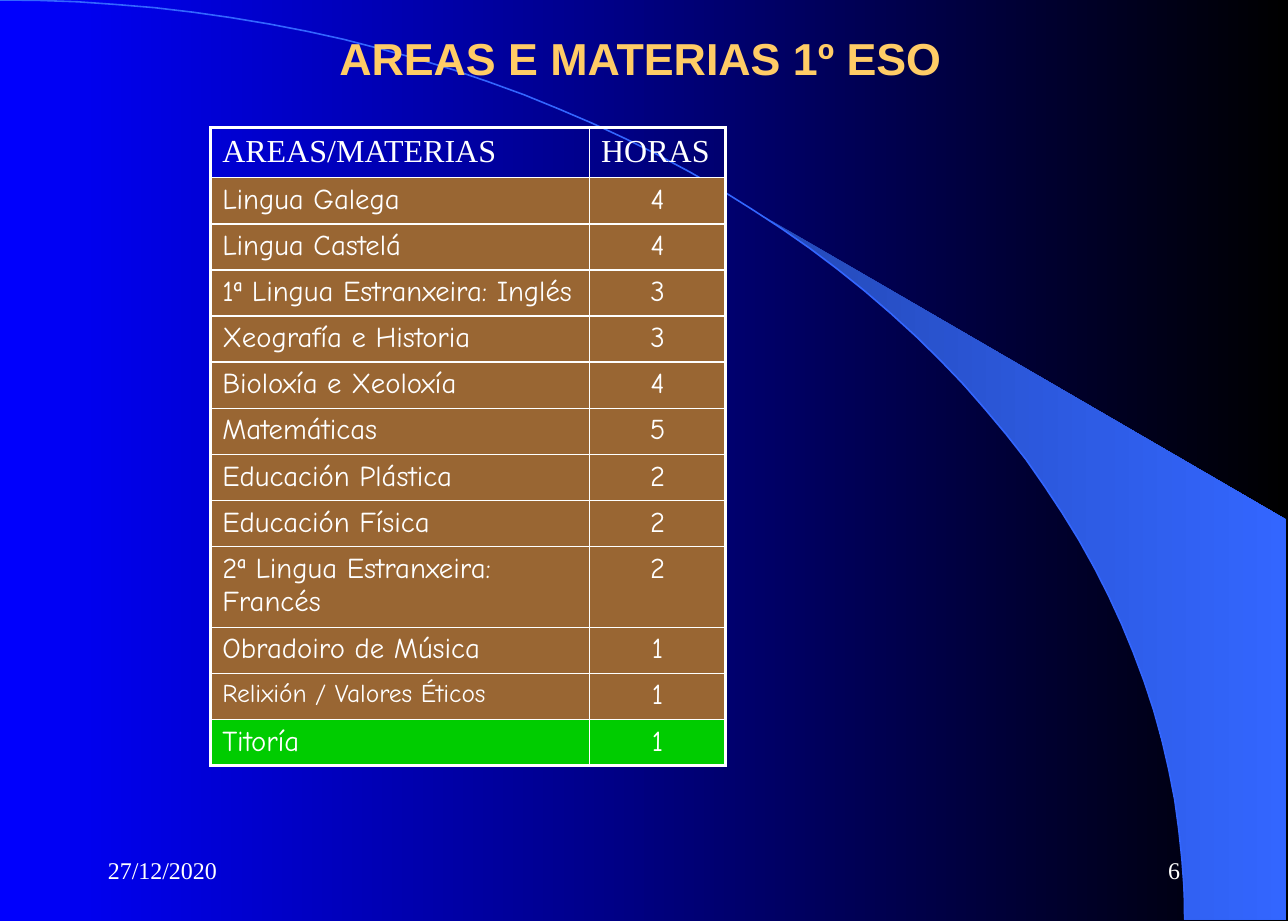
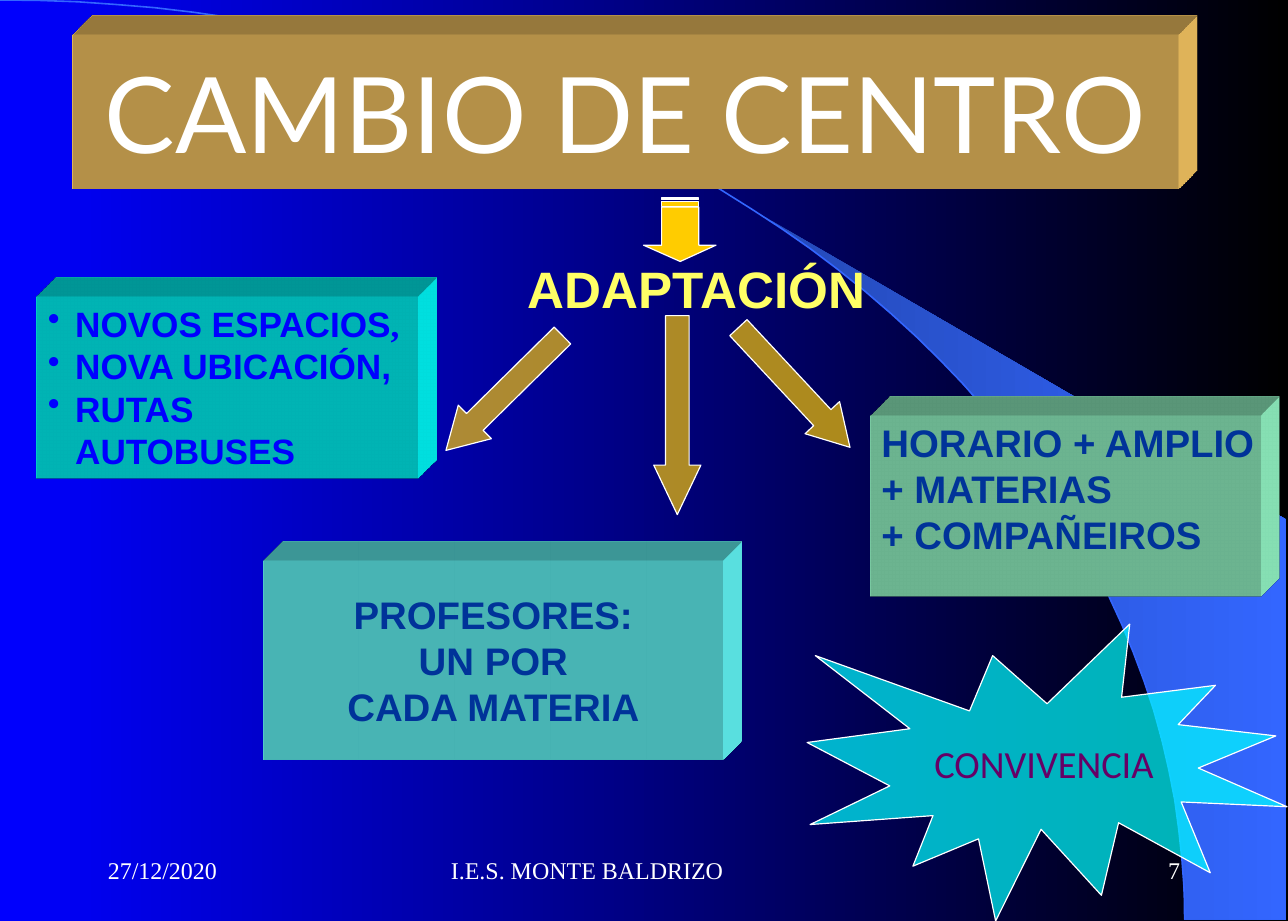
from math import acos, cos, pi, sin

from lxml.etree import SubElement
from pptx import Presentation
from pptx.dml.color import RGBColor
from pptx.enum.shapes import MSO_SHAPE
from pptx.enum.text import MSO_ANCHOR, PP_ALIGN
from pptx.oxml import parse_xml
from pptx.oxml.ns import nsdecls, qn
from pptx.util import Cm, Pt

WHITE = RGBColor(0xFF, 0xFF, 0xFF)
BLACK = RGBColor(0x00, 0x00, 0x00)
BLUE = RGBColor(0x00, 0x00, 0xFF)
SWOOSH_DARK = RGBColor(0x24, 0x49, 0xB6)
SWOOSH_LIGHT = RGBColor(0x33, 0x66, 0xFF)
SAND = RGBColor(0xFF, 0xCC, 0x66)
GOLD = RGBColor(0xFF, 0xCC, 0x00)
YELLOW = RGBColor(0xFF, 0xFF, 0x66)
CYAN = RGBColor(0x00, 0xFF, 0xFF)
AQUA = RGBColor(0x66, 0xFF, 0xFF)
MINT = RGBColor(0x99, 0xFF, 0xCC)
NAVY = RGBColor(0x00, 0x33, 0x99)
PURPLE = RGBColor(0x66, 0x00, 0x66)
BROWN = RGBColor(0x99, 0x66, 0x33)
GREEN = RGBColor(0x00, 0xCC, 0x00)

FOOTER = {"name": "Times New Roman", "size": Pt(15)}
TITLE = {"name": "Arial", "size": Pt(28), "bold": True}
BANNER = {"name": "Lato", "size": Pt(66)}
KEYWORD = {"name": "Arial", "size": Pt(32), "bold": True}
LIST = {"name": "Arial", "size": Pt(22), "bold": True}
BOX = {"name": "Arial", "size": Pt(24), "bold": True}
SEAL = {"name": "Calibri", "size": Pt(24)}
HEADER = {"name": "Times New Roman", "size": Pt(20)}
CELL = {"name": "Comic Neue", "size": Pt(18)}
CELL_SMALL = {"name": "Comic Neue", "size": Pt(16)}

ARC_W, ARC_H = 26.14, 20.29
SWOOSH_START = acos(1 - 4.7 / ARC_H)

SUBJECTS = [
    ("Lingua Galega", 4), ("Lingua Castelá", 4), ("1ª Lingua Estranxeira: Inglés", 3),
    ("Xeografía e Historia", 3), ("Bioloxía e Xeoloxía", 4), ("Matemáticas", 5),
    ("Educación Plástica", 2), ("Educación Física", 2), ("2ª Lingua Estranxeira: Francés", 2),
    ("Obradoiro de Música", 1), ("Relixión / Valores Éticos", 1), ("Titoría", 1),
]


def arc(start, steps=48):
    """Return points in cm along the quarter ellipse, from an angle to its end."""
    angles = [start + (pi / 2 - start) * i / steps for i in range(steps + 1)]
    return [(ARC_W * sin(a), ARC_H * (1 - cos(a))) for a in angles]


class Deck:
    """Hold the presentation, its shared style and the current slide."""

    def __init__(self):
        """Start an empty presentation of the right size."""
        self.prs = Presentation()
        self.prs.slide_width, self.prs.slide_height = Cm(28.42), Cm(20.32)
        self.s = None

    def slide(self, number, center=None):
        """Add a slide with its background, swoosh and footers."""
        self.s = self.prs.slides.add_slide(self.prs.slide_layouts[6])
        self.gradient(self.s.background.fill, BLUE, BLACK)
        corners = [(28.37, 11.46), (28.37, ARC_H)]
        swoosh = self.outline([corners + arc(SWOOSH_START)[::-1]])
        self.gradient(swoosh.fill, SWOOSH_DARK, SWOOSH_LIGHT)
        swoosh.line.fill.background()
        curve = self.outline([arc(0)], close=False)
        curve.fill.background()
        self.stroke(curve, SWOOSH_LIGHT, 1)
        footers = [(2.13, 5.92, "27/12/2020", PP_ALIGN.LEFT),
                   (9.7, 8.99, center, PP_ALIGN.LEFT),
                   (20.37, 5.92, str(number), PP_ALIGN.RIGHT)]
        for x, w, text, align in footers:
            if text:
                self.label((x, 18.52, w, 1.35), [text], FOOTER, WHITE, align, MSO_ANCHOR.MIDDLE)

    def gradient(self, fill, first, last):
        """Give a fill a left to right gradient."""
        fill.gradient()
        fill.gradient_angle = 0
        for stop, color, position in zip(fill.gradient_stops, (first, last), (0, 1)):
            stop.color.rgb, stop.position = color, position

    def stroke(self, sp, color, width):
        """Give a shape a solid outline."""
        sp.line.color.rgb, sp.line.width = color, Pt(width)

    def outline(self, contours, close=True):
        """Add a freeform from lists of points in cm."""
        contours = [[(round(x * 100), round(y * 100)) for x, y in c] for c in contours]
        builder = self.s.shapes.build_freeform(*contours[0][0], scale=Cm(0.01))
        for i, (start, *rest) in enumerate(contours):
            if i:
                builder.move_to(*start)
            builder.add_line_segments(rest, close=close)
        sp = builder.convert_to_shape()
        sp.shadow.inherit = False
        return sp

    def style(self, r, font, color):
        """Set the font values and colour of a run."""
        for key, value in font.items():
            setattr(r.font, key, value)
        r.font.color.rgb = color

    def put_text(self, sp, lines, font, color, align, anchor, **insets):
        """Put one paragraph per line into a shape."""
        tf = sp.text_frame
        values = {"word_wrap": True, "vertical_anchor": anchor, **insets}
        for key, value in values.items():
            setattr(tf, key, value)
        for i, line in enumerate(lines):
            p = tf.add_paragraph() if i else tf.paragraphs[0]
            p.alignment = align
            r = p.add_run()
            r.text = line
            self.style(r, font, color)
        return tf

    def label(self, at, lines, font, color, align=PP_ALIGN.LEFT, anchor=MSO_ANCHOR.TOP, **insets):
        """Add a text box."""
        sp = self.s.shapes.add_textbox(*map(Cm, at))
        self.put_text(sp, lines, font, color, align, anchor, **insets)

    def shape(self, kind, at, fill, alpha=None):
        """Add a preset shape with a fill, which may be translucent."""
        sp = self.s.shapes.add_shape(kind, *map(Cm, at))
        sp.shadow.inherit = False
        sp.fill.solid()
        sp.fill.fore_color.rgb = fill
        sp.line.fill.background()
        if alpha:
            color = sp._element.spPr.find(qn("a:solidFill"))[0]
            SubElement(color, qn("a:alpha")).set("val", str(alpha * 1000))
            self.stroke(sp, WHITE, 0.75)
        return sp

    def block(self, at, fill, lines, font, color, align=PP_ALIGN.CENTER,
              anchor=MSO_ANCHOR.MIDDLE, **insets):
        """Add a box extruded to the top right, and return its text frame."""
        sp = self.shape(MSO_SHAPE.RECTANGLE, at, fill)
        for xml in (
            f'<a:scene3d {nsdecls("a")}><a:camera prst="legacyObliqueTopRight"/>'
            '<a:lightRig rig="legacyFlat3" dir="b"/></a:scene3d>',
            f'<a:sp3d {nsdecls("a")} extrusionH="430200" prstMaterial="legacyMatte">'
            '<a:bevelT w="13500" h="13500" prst="angle"/>'
            '<a:bevelB w="13500" h="13500" prst="angle"/>'
            f'<a:extrusionClr><a:srgbClr val="{fill}"/></a:extrusionClr></a:sp3d>',
        ):
            sp._element.spPr.append(parse_xml(xml))
        return self.put_text(sp, lines, font, color, align, anchor, **insets)

    def bullets(self, tf):
        """Give every paragraph a hanging bullet."""
        for p in tf.paragraphs:
            pPr = p._p.get_or_add_pPr()
            pPr.set("marL", str(Cm(0.6)))
            pPr.set("indent", str(-Cm(0.6)))
            SubElement(pPr, qn("a:buChar")).set("char", "•")

    def arrow(self, at, rotation, head):
        """Add a translucent block arrow."""
        sp = self.shape(MSO_SHAPE.RIGHT_ARROW, at, GOLD, 68)
        sp.rotation = rotation
        sp.adjustments[0], sp.adjustments[1] = 0.5, head

    def borders(self, cell, outer):
        """Draw white cell borders, thicker on the outer sides."""
        tcPr = cell._tc.get_or_add_tcPr()
        for side in "LRTB":
            width = Pt(2.25 if side in outer else 1)
            tcPr.append(parse_xml(
                f'<a:ln{side} {nsdecls("a")} w="{width}"><a:solidFill>'
                f'<a:srgbClr val="{WHITE}"/></a:solidFill></a:ln{side}>'))

    def table(self, at, widths, rows, heights):
        """Add the table of subjects and hours."""
        size = sum(widths), sum(heights)
        tbl = self.s.shapes.add_table(len(rows), len(widths), *map(Cm, at + size)).table
        tbl.first_row = tbl.horz_banding = False
        for column, w in zip(tbl.columns, widths):
            column.width = Cm(w)
        last = len(rows) - 1
        for i, (row, h) in enumerate(zip(rows, heights)):
            tbl.rows[i].height = Cm(h)
            for j, value in enumerate(row):
                cell = tbl.cell(i, j)
                self.borders(cell, "LR"[j] + {0: "T", last: "B"}.get(i, ""))
                if i:
                    cell.fill.solid()
                    cell.fill.fore_color.rgb = GREEN if i == last else BROWN
                else:
                    cell.fill.background()
                p = cell.text_frame.paragraphs[0]
                p.alignment = PP_ALIGN.CENTER if i and j else PP_ALIGN.LEFT
                r = p.add_run()
                r.text = str(value)
                small = r.text.startswith("Relixión")
                self.style(r, (CELL_SMALL if small else CELL) if i else HEADER, WHITE)


def subjects_slide(deck):
    """Build the slide with the subjects of the first year."""
    deck.slide(6)
    deck.label((4.65, 0.43, 18.95, 2.74), ["AREAS E MATERIAS 1º ESO"], TITLE, SAND,
               PP_ALIGN.CENTER, margin_top=Cm(0.25))
    heights = [1.03] + [0.98] * 8 + [1.78, 0.98, 1.02, 0.98]
    deck.table((4.65, 2.82), (8.36, 3), [("AREAS/MATERIAS", "HORAS")] + SUBJECTS, heights)


def change_slide(deck):
    """Build the slide about moving to a new school."""
    deck.slide(7, "I.E.S. MONTE BALDRIZO")
    deck.block((1.6, 0.76, 24.41, 3.4), SAND, ["CAMBIO DE CENTRO"], BANNER, WHITE)
    deck.label((11.4, 5.56, 8.05, 1.6), ["ADAPTACIÓN"], KEYWORD, YELLOW)
    spaces = deck.block((0.81, 6.55, 8.41, 4.01), CYAN,
                        ["NOVOS ESPACIOS", "NOVA UBICACIÓN,", "RUTAS AUTOBUSES"],
                        LIST, BLUE, PP_ALIGN.LEFT, MSO_ANCHOR.TOP)
    deck.bullets(spaces)
    r = spaces.paragraphs[0].add_run()
    r.text = ","
    deck.style(r, {**LIST, "name": "Times New Roman"}, BLUE)
    deck.block((19.2, 9.17, 8.61, 3.99), MINT,
               ["HORARIO + AMPLIO", "+ MATERIAS", "+ COMPAÑEIROS"], BOX, NAVY,
               PP_ALIGN.LEFT, MSO_ANCHOR.TOP, margin_top=Cm(0.08), margin_right=0)
    deck.block((5.82, 12.37, 10.13, 4.39), AQUA,
               ["PROFESORES:", "UN POR", "CADA MATERIA"], BOX, NAVY)

    left, right = 14.6, 15.42
    head = [(right, 4.57), (left, 4.57), (left, 5.41), (14.2, 5.41),
            (15.01, 5.77), (15.8, 5.41), (right, 5.41)]
    stripes = [[(left, y), (right, y), (right, y + h), (left, y + h)]
               for y, h in ((4.45, 0.1), (4.37, 0.04))]
    down = deck.outline([head] + stripes)
    down.fill.solid()
    down.fill.fore_color.rgb = GOLD
    deck.stroke(down, WHITE, 0.75)

    deck.arrow((9.32, 8.15, 3.61, 1.04), 135.4, 0.86)
    deck.arrow((15.72, 8.03, 3.61, 1.04), 47, 0.86)
    deck.arrow((12.75, 8.64, 4.39, 1.04), 90, 1.05)
    seal = deck.shape(MSO_SHAPE.EXPLOSION1, (17.81, 13.77, 10.59, 6.55), CYAN, 70)
    deck.put_text(seal, ["CONVIVENCIA"], SEAL, PURPLE, PP_ALIGN.CENTER, MSO_ANCHOR.MIDDLE)


def main():
    """Build both slides and save them."""
    deck = Deck()
    subjects_slide(deck)
    change_slide(deck)
    deck.prs.save("out.pptx")


if __name__ == "__main__":
    main()
